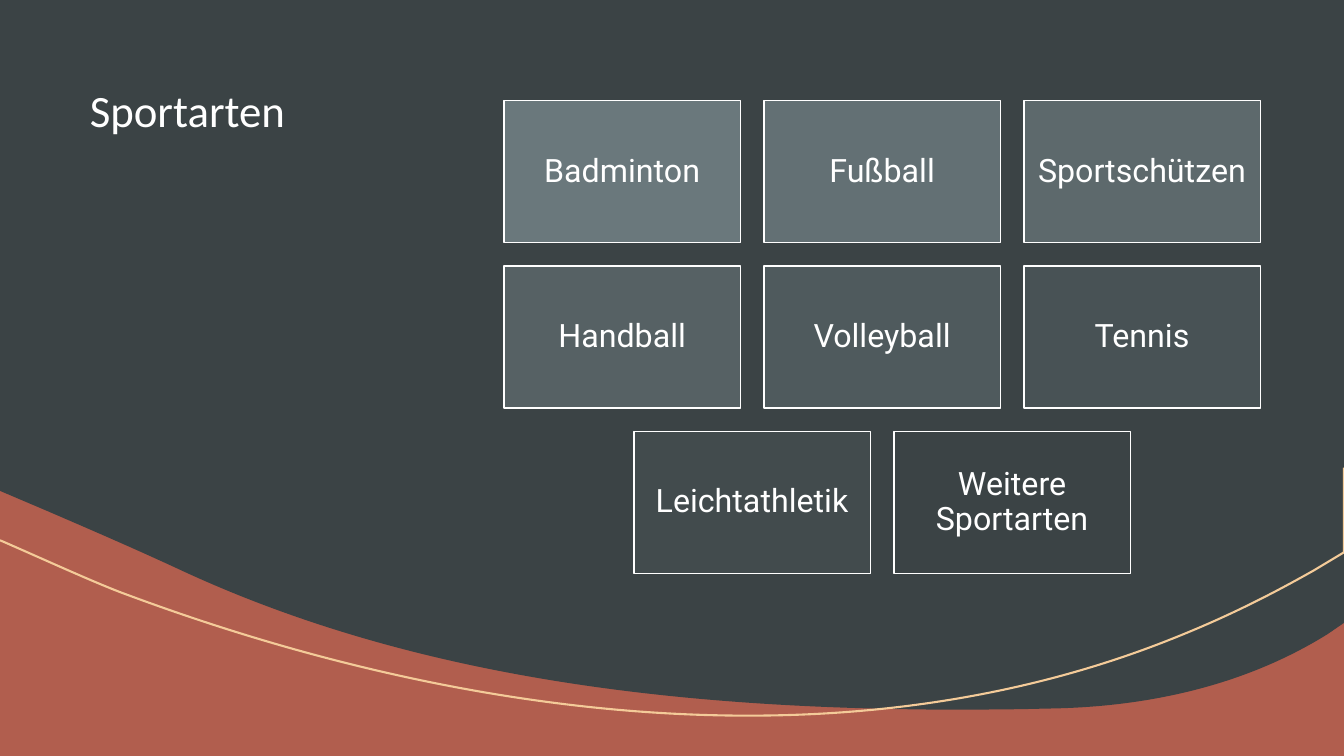
import lxml.etree
import pptx
import pptx.dml.color
import pptx.enum.shapes
import pptx.enum.text
import pptx.oxml.ns
import pptx.util
from pptx.util import Inches

SLATE, MIST, RUST, SAND, WHITE = "3B4345", "6A787C", "B15E4E", "F4CB99", "FFFFFF"
SPORTS = ["Badminton", "Fußball", "Sportschützen", "Handball", "Volleyball",
          "Tennis", "Leichtathletik", "Weitere Sportarten"]
COLUMNS = 3


def colour(value):
    return pptx.dml.color.RGBColor.from_string(value)


def blend(first, last, share):
    """Return the hex colour lying at share (0 to 1) between two hex colours."""
    pairs = [(int(first[i:i + 2], 16), int(last[i:i + 2], 16)) for i in (0, 2, 4)]
    return "".join(f"{round(a + (b - a) * share):02X}" for a, b in pairs)


def write(frame, words, font, size, alignment, anchor):
    frame.word_wrap = True
    frame.auto_size = pptx.enum.text.MSO_AUTO_SIZE.NONE
    frame.vertical_anchor = anchor
    paragraph = frame.paragraphs[0]
    paragraph.alignment = alignment
    paragraph.line_spacing = 0.9
    run = paragraph.add_run()
    run.text = words
    run.font.name = font
    run.font.size = pptx.util.Pt(size)
    run.font.color.rgb = colour(WHITE)


def add_outline(slide, box, start, segments, close):
    """Draw segments from start: one point makes a line, three a Bézier curve."""
    left, top = box[:2]
    anchors = [start] + [segment[-1] for segment in segments]
    placed = [(Inches(left + x), Inches(top + y)) for x, y in anchors]
    builder = slide.shapes.build_freeform(*placed[0], scale=1.0)
    builder.add_line_segments(placed[1:], close=close)
    outline = builder.convert_to_shape()
    outline.shadow.inherit = False

    qn = pptx.oxml.ns.qn
    min_x = min(x for x, _ in anchors)
    min_y = min(y for _, y in anchors)
    lines = list(outline._element.iter(qn("a:lnTo")))
    for line, segment in zip(lines, segments):
        if len(segment) == 3:
            curve = lxml.etree.Element(qn("a:cubicBezTo"))
            for x, y in segment:
                lxml.etree.SubElement(curve, qn("a:pt"), x=str(int(Inches(x - min_x))),
                                      y=str(int(Inches(y - min_y))))
            line.getparent().replace(line, curve)
    return outline


def add_waves(slide, box):
    width = box[2]
    field = add_outline(slide, box, (0, 0), [
        [(width, 0)], [(width, 6.18)], [(13.17, 6.29)],
        [(12.32, 6.82), (11.33, 7.02), (10.37, 7.03)],
        [(10.02, 7.04), (9.66, 7.04), (9.3, 7.04)],
        [(6.77, 7.02), (4.14, 6.75), (1.78, 5.65)],
        [(1.35, 5.45), (0.91, 5.26), (0.47, 5.07)], [(0, 4.87)]], True)
    field.fill.solid()
    field.fill.fore_color.rgb = colour(SLATE)
    field.line.fill.background()

    swoosh = add_outline(slide, box, (width, 4.64), [
        [(width, 5.48)], [(13.03, 5.66)],
        [(12.64, 5.88), (12.2, 6.11), (11.62, 6.34)],
        [(10.29, 6.87), (8.87, 7.1), (7.42, 7.1)],
        [(5.36, 7.1), (3.25, 6.64), (1.26, 5.9)],
        [(0.98, 5.8), (0.37, 5.52), (0, 5.36)]], False)
    swoosh.fill.background()
    swoosh.line.color.rgb = colour(SAND)
    swoosh.line.width = pptx.util.Pt(1.5)


def add_title(slide, box):
    title = slide.shapes.title
    title.left, title.top, title.width, title.height = map(Inches, box)
    write(title.text_frame, "Sportarten", "Calibri", 32,
          pptx.enum.text.PP_ALIGN.LEFT, pptx.enum.text.MSO_ANCHOR.TOP)
    # Bring the title in front of the waves
    slide.shapes._spTree.append(title._element)


def add_tile(slide, box, sport, fill):
    tile = slide.shapes.add_shape(
        pptx.enum.shapes.MSO_SHAPE.RECTANGLE, *map(Inches, box))
    tile.shadow.inherit = False
    tile.fill.solid()
    tile.fill.fore_color.rgb = colour(fill)
    tile.line.color.rgb = colour(WHITE)
    tile.line.width = pptx.util.Pt(1)
    frame = tile.text_frame
    frame.margin_left = frame.margin_right = Inches(0.1)
    frame.margin_top = frame.margin_bottom = Inches(0.1)
    write(frame, sport, "Roboto", 23,
          pptx.enum.text.PP_ALIGN.CENTER, pptx.enum.text.MSO_ANCHOR.MIDDLE)


def add_sports(slide, box):
    """Fill the box with rows of tiles, darkening in order; a short row is centred."""
    left, top, width = box
    tile_width = width / (COLUMNS + 0.1 * (COLUMNS - 1))
    tile_height, gap = 0.6 * tile_width, 0.1 * tile_width
    for index, sport in enumerate(SPORTS):
        row, column = divmod(index, COLUMNS)
        missing = max(0, (row + 1) * COLUMNS - len(SPORTS))
        x = left + (column + missing / 2) * (tile_width + gap)
        y = top + row * (tile_height + gap)
        fill = blend(MIST, SLATE, index / (len(SPORTS) - 1))
        add_tile(slide, (x, y, tile_width, tile_height), sport, fill)


def main():
    deck = pptx.Presentation()
    deck.slide_width, deck.slide_height = Inches(13.33), Inches(7.5)
    slide = deck.slides.add_slide(deck.slide_layouts[5])
    slide.background.fill.solid()
    slide.background.fill.fore_color.rgb = colour(RUST)
    add_waves(slide, (0, 0, 13.33, 7.5))
    add_title(slide, (0.79, 0.83, 3.94, 2.5))
    add_sports(slide, (5, 1, 7.5))
    deck.save("out.pptx")


if __name__ == "__main__":
    main()
